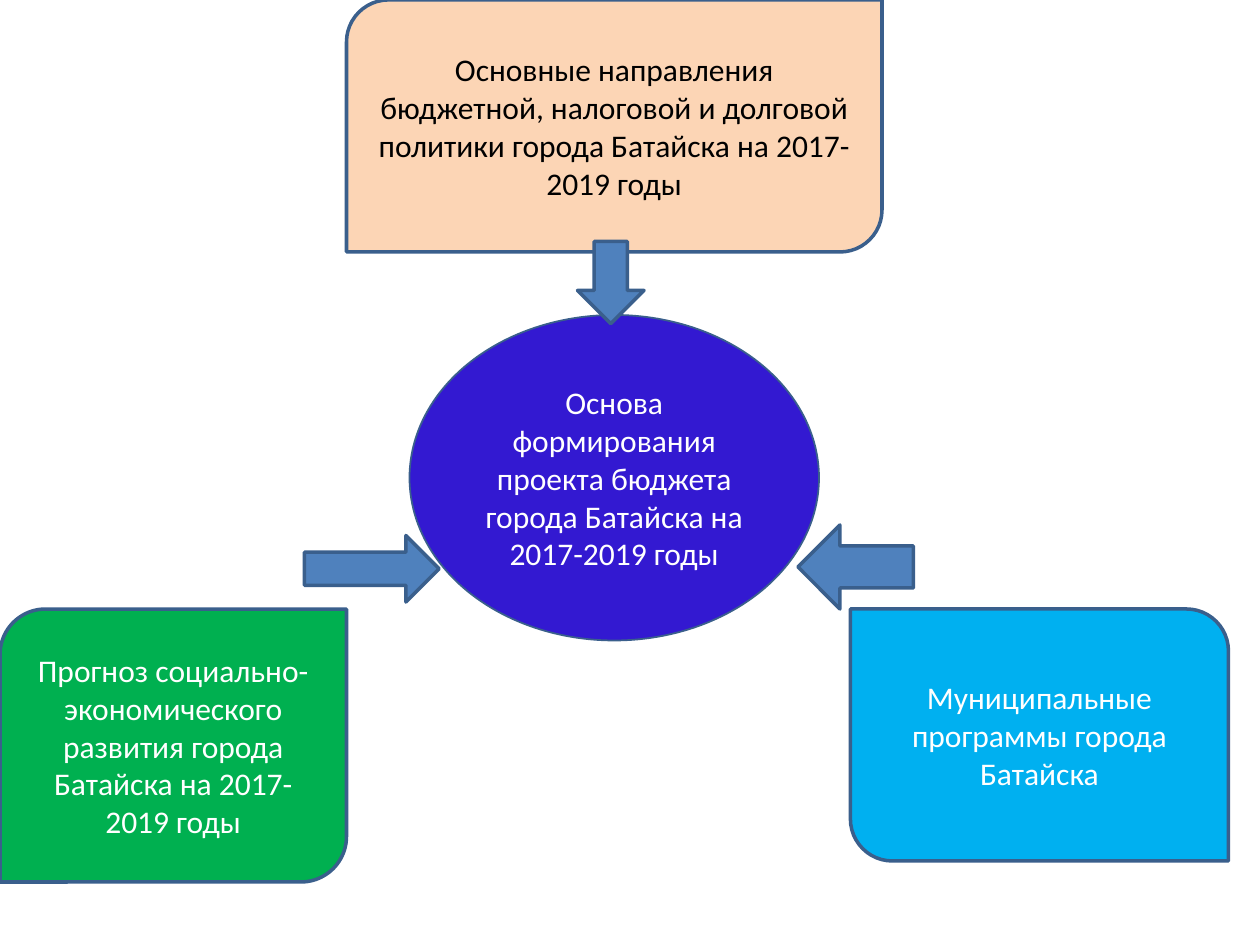
from dataclasses import dataclass

from pptx import Presentation
from pptx.dml.color import RGBColor
from pptx.enum.shapes import MSO_SHAPE
from pptx.enum.text import MSO_ANCHOR, PP_ALIGN
from pptx.shapes.autoshape import Shape
from pptx.slide import Slide
from pptx.util import Pt

OUTLINE = "3A5F8C"
ARROW_FILL = "4F81BD"
CORNER = 0.16667


@dataclass
class Block:
    """A diagram element; all lengths are in points."""
    kind: MSO_SHAPE
    left: float
    top: float
    width: float
    height: float
    fill: str = ARROW_FILL
    text: str = ""
    text_color: str = "FFFFFF"
    line_width: float = 2
    adjustments: tuple[float, ...] = ()


CARD = MSO_SHAPE.ROUND_2_DIAG_RECTANGLE

BLOCKS = [
    # Centre
    Block(MSO_SHAPE.OVAL, 234, 180, 234, 186, "3319D1",
          "Основа формирования проекта бюджета города Батайска на 2017-2019 годы",
          line_width=1),
    # Sources of the budget; the right-hand card rounds the opposite corners
    Block(CARD, 486, 348, 216, 144, "00B0F0",
          "Муниципальные программы города Батайска", adjustments=(0, CORNER)),
    Block(CARD, 0, 348, 198, 156, "00B050",
          "Прогноз социально-экономического развития города Батайска на 2017-2019 годы",
          adjustments=(CORNER, 0)),
    Block(CARD, 198, 0, 306, 144, "FCD5B5",
          "Основные направления бюджетной, налоговой и долговой политики "
          "города Батайска на 2017-2019 годы",
          text_color="000000", adjustments=(CORNER, 0)),
    # Arrows towards the centre
    Block(MSO_SHAPE.DOWN_ARROW, 330, 138, 38, 47),
    Block(MSO_SHAPE.LEFT_ARROW, 456, 300, 66, 48),
    Block(MSO_SHAPE.RIGHT_ARROW, 174, 306, 77, 38),
]


def color(hex_value: str) -> RGBColor:
    return RGBColor.from_string(hex_value)


def write_text(shape: Shape, text: str, text_color: str) -> None:
    text_frame = shape.text_frame
    text_frame.text = text
    text_frame.word_wrap = True
    text_frame.vertical_anchor = MSO_ANCHOR.MIDDLE
    paragraph = text_frame.paragraphs[0]
    paragraph.alignment = PP_ALIGN.CENTER
    for run in paragraph.runs:
        run.font.name = "Calibri"
        run.font.size = Pt(18)
        run.font.color.rgb = color(text_color)


def draw_block(slide: Slide, block: Block) -> None:
    shape = slide.shapes.add_shape(block.kind, Pt(block.left), Pt(block.top),
                                   Pt(block.width), Pt(block.height))
    shape.shadow.inherit = False
    for index, value in enumerate(block.adjustments):
        shape.adjustments[index] = value
    shape.fill.solid()
    shape.fill.fore_color.rgb = color(block.fill)
    shape.line.color.rgb = color(OUTLINE)
    shape.line.width = Pt(block.line_width)
    if block.text:
        write_text(shape, block.text, block.text_color)


def main() -> None:
    presentation = Presentation()
    presentation.slide_width = Pt(720)
    presentation.slide_height = Pt(540)
    slide = presentation.slides.add_slide(presentation.slide_layouts[6])
    for block in BLOCKS:
        draw_block(slide, block)
    presentation.save("out.pptx")


if __name__ == "__main__":
    main()
